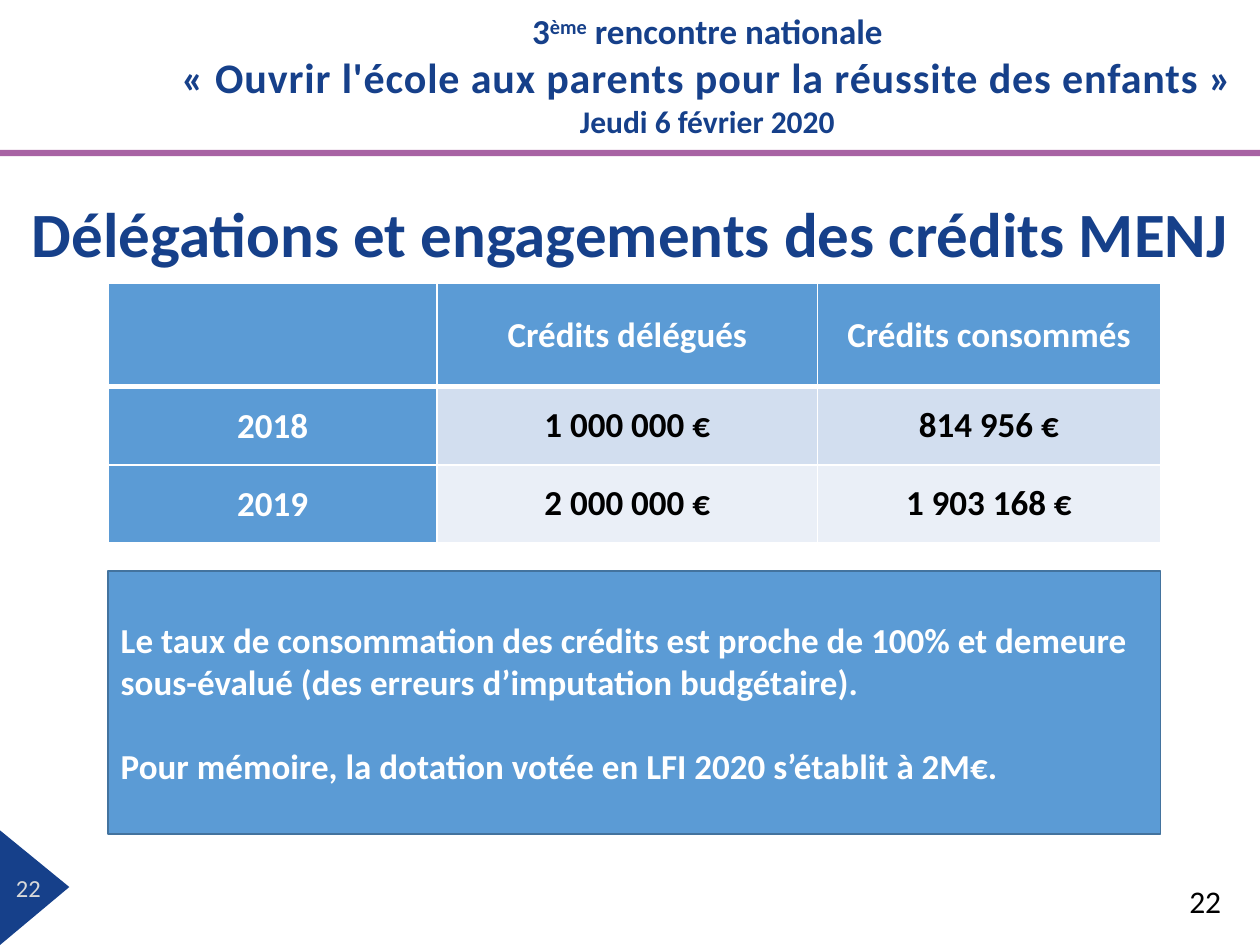
from typing import NamedTuple

from lxml import etree
from pptx import Presentation
from pptx import util as u
from pptx.dml.color import RGBColor
from pptx.enum import shapes, text
from pptx.oxml.ns import qn

COLS, ROWS = 100, 75
NAVY, PURPLE, BLUE, WHITE, BLACK = "16408A", "A863A4", "5B9BD5", "FFFFFF", "000000"
CENTER, LEFT = text.PP_ALIGN.CENTER, text.PP_ALIGN.LEFT
MIDDLE = text.MSO_ANCHOR.MIDDLE

prs = Presentation()
prs.slide_width, prs.slide_height = u.Inches(10), u.Inches(7.5)
CELL = prs.slide_width / COLS


class Box(NamedTuple):
    """Position and size in grid columns and rows."""
    col: float
    row: float
    cols: float
    rows: float

    def emu(self) -> list[int]:
        return [round(n * CELL) for n in self]


class Run(NamedTuple):
    words: str
    size: float
    color: str = NAVY
    bold: bool = True
    raised: int = 0
    spacing: float = 0


class Para(NamedTuple):
    runs: list[Run]
    align: text.PP_ALIGN = CENTER
    before: float = 0
    line: float = 1.0


def rgb(color: str) -> RGBColor:
    return RGBColor.from_string(color)


def write(tf, paras: list[Para], anchor=MIDDLE, inset=(0.1, 0.05)) -> None:
    tf.word_wrap = True
    tf.vertical_anchor = anchor
    tf.margin_left = tf.margin_right = u.Inches(inset[0])
    tf.margin_top = tf.margin_bottom = u.Inches(inset[1])
    for i, para in enumerate(paras):
        p = tf.add_paragraph() if i else tf.paragraphs[0]
        p.alignment, p.line_spacing = para.align, para.line
        p.space_before = u.Pt(para.before)
        for run in para.runs:
            r = p.add_run()
            r.text = run.words
            r.font.name, r.font.size, r.font.bold = "Calibri", u.Pt(run.size), run.bold
            r.font.color.rgb = rgb(run.color)
            rpr = r._r.get_or_add_rPr()
            if run.raised:
                rpr.set("baseline", str(run.raised * 1000))
            if run.spacing:
                rpr.set("spc", str(round(run.spacing * 100)))


def add_text(slide, box: Box, paras: list[Para], **layout) -> None:
    write(slide.shapes.add_textbox(*box.emu()).text_frame, paras, **layout)


def paint(sp, fill: str, line: str = "") -> None:
    sp.shadow.inherit = False
    sp.fill.solid()
    sp.fill.fore_color.rgb = rgb(fill)
    if line:
        sp.line.color.rgb, sp.line.width = rgb(line), u.Pt(1)
    else:
        sp.line.fill.background()


def add_shape(slide, kind, box: Box, fill: str, line: str = ""):
    sp = slide.shapes.add_shape(kind, *box.emu())
    paint(sp, fill, line)
    return sp


def set_borders(cell, **widths: float) -> None:
    """Give the sides L, R, T and B white lines of these widths in points."""
    tcpr = cell._tc.get_or_add_tcPr()
    for side, width in widths.items():
        ln = etree.SubElement(tcpr, qn(f"a:ln{side}"), w=str(u.Pt(width)))
        fill = etree.SubElement(ln, qn("a:solidFill"))
        etree.SubElement(fill, qn("a:srgbClr"), val=WHITE)


def add_credits_table(slide, box: Box, col_widths, row_heights, data, fills) -> None:
    table = slide.shapes.add_table(len(data), len(data[0]), *box.emu()).table
    for col, width in zip(table.columns, col_widths):
        col.width = round(width * CELL)
    for i, (row, height) in enumerate(zip(table.rows, row_heights)):
        row.height = round(height * CELL)
        for j, cell in enumerate(row.cells):
            heading = i == 0 or j == 0
            set_borders(cell, L=1, R=1, T=3 if i == 1 else 1, B=3 if i == 0 else 1)
            cell.fill.solid()
            cell.fill.fore_color.rgb = rgb(BLUE if heading else fills[i - 1])
            cell.vertical_anchor = MIDDLE
            if data[i][j]:
                run = Run(data[i][j], 20, WHITE if heading else BLACK)
                write(cell.text_frame, [Para([run], line=1.05 if i and not j else 1.0)])
            cell.margin_left = cell.margin_right = u.Inches(0.05)
            cell.margin_top = cell.margin_bottom = 0


def add_page_marker(slide, number: str) -> None:
    top, tip, middle = 65.9, 5.5, 70.4
    fb = slide.shapes.build_freeform(0, top * CELL)
    fb.add_line_segments([(0, ROWS * CELL), (tip * CELL, middle * CELL)], close=True)
    paint(fb.convert_to_shape(), NAVY)
    add_text(slide, Box(-0.5, 68.7, 5.5, 3.5),
             [Para([Run(number, 14, "D9D9D9", False)])], inset=(0.04, 0.04))


def add_event_header(slide) -> None:
    add_text(slide, Box(12.3, 0, 87.7, 11.9), [
        Para([Run("3", 20), Run("ème", 20, raised=30), Run(" rencontre nationale", 20)]),
        Para([Run("« Ouvrir l'école aux parents pour la réussite des enfants »",
                  24, spacing=0.5)]),
        Para([Run("Jeudi 6 février 2020", 18)]),
    ])
    add_shape(slide, shapes.MSO_SHAPE.RECTANGLE, Box(0, 11.9, COLS, 0.5), PURPLE)


def main() -> None:
    slide = prs.slides.add_slide(prs.slide_layouts[5])
    add_event_header(slide)
    add_page_marker(slide, "22")

    title = slide.shapes.title
    title.left, title.top, title.width, title.height = Box(0, 15.6, COLS, 6.5).emu()
    write(title.text_frame,
          [Para([Run("Délégations et engagements des crédits MENJ", 36)], line=0.9)])
    title.text_frame.auto_size = text.MSO_AUTO_SIZE.NONE

    add_text(slide, Box(93.4, 69.5, 6.1, 4),
             [Para([Run("22", 18, BLACK, False)], LEFT)], anchor=text.MSO_ANCHOR.TOP)

    note = add_shape(slide, shapes.MSO_SHAPE.FLOWCHART_PROCESS,
                     Box(8.6, 45.3, 83.5, 20.9), BLUE, "43739E")
    write(note.text_frame, [
        Para([Run("Le taux de consommation des crédits est proche de 100% et demeure "
                  "sous-évalué (des erreurs d’imputation budgétaire).", 20, WHITE)], LEFT),
        Para([Run("Pour mémoire, la dotation votée en LFI 2020 s’établit à 2M€.",
                  20, WHITE)], LEFT, before=24),
    ])

    add_credits_table(
        slide, Box(8.6, 22.5, 83.5, 20.6), (26.1, 30.2, 27.2), (8.2, 6.2, 6.2),
        [("", "Crédits délégués", "Crédits consommés"),
         ("2018", "1 000 000 €", "814 956 €"),
         ("2019", "2 000 000 €", "1 903 168 €")],
        ("D2DEEF", "EAEFF7"))

    prs.save("out.pptx")


if __name__ == "__main__":
    main()
